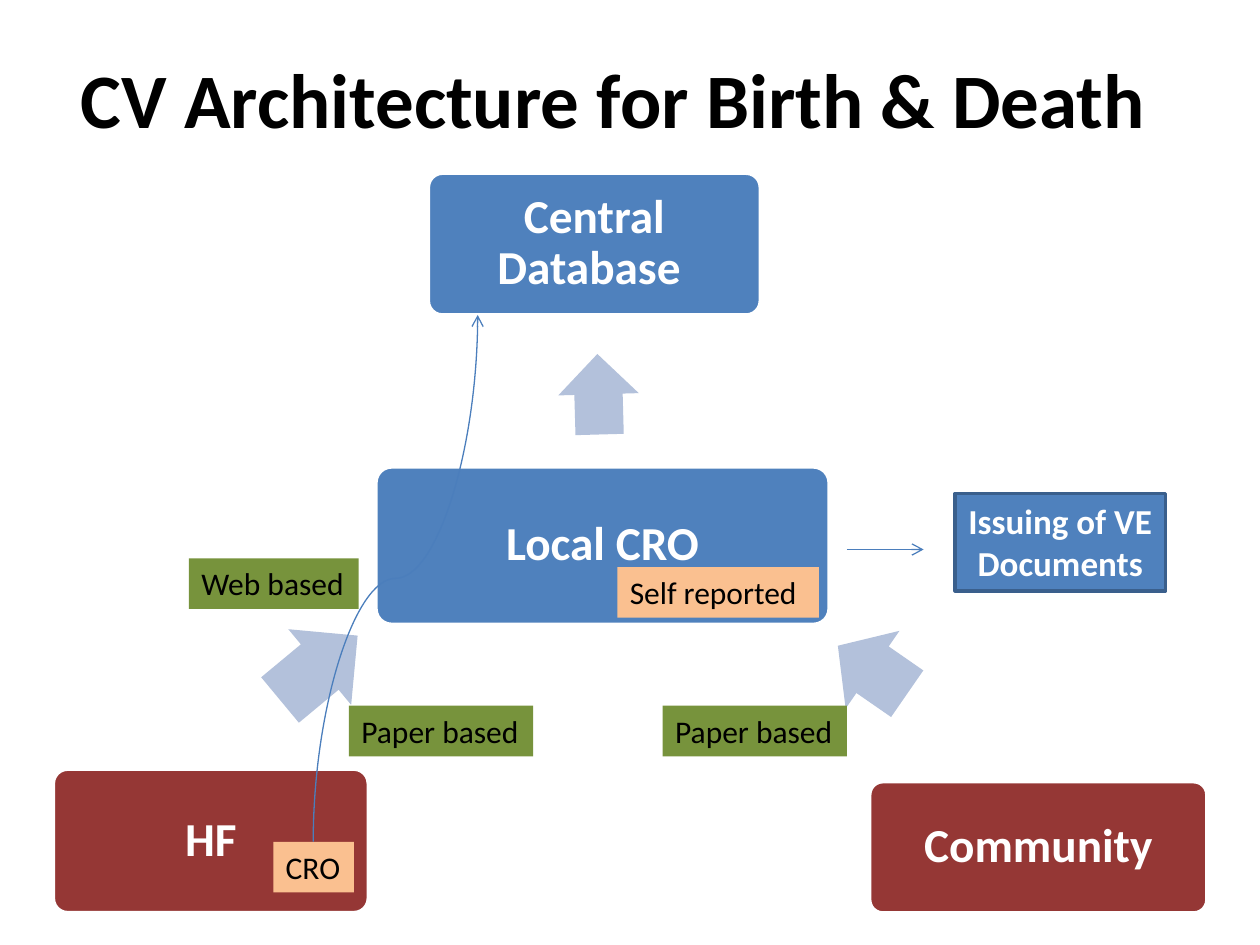
import dataclasses

import pptx
import pptx.dml.color
import pptx.enum.shapes
import pptx.enum.text
import pptx.oxml
import pptx.oxml.ns
import pptx.util
from pptx.enum.shapes import MSO_CONNECTOR, MSO_SHAPE
from pptx.enum.text import MSO_ANCHOR, PP_ALIGN

Pt = pptx.util.Pt


@dataclasses.dataclass(frozen=True)
class Theme:
    font: str = "Calibri"
    black: str = "000000"
    white: str = "FFFFFF"
    blue: str = "4F81BD"
    dark_blue: str = "3A5F8C"
    pale_blue: str = "B3C1DB"
    link: str = "4B7EBC"
    red: str = "953735"
    green: str = "77933C"
    peach: str = "FAC090"
    title_size: float = 44
    card_size: float = 27
    document_size: float = 20
    tag_size: float = 18


def color(value):
    return pptx.dml.color.RGBColor.from_string(value)


def apply(target, values):
    for name, value in values.items():
        setattr(target, name, value)


class SlideBuilder:
    """Draws styled elements on one slide; all lengths are in points."""

    def __init__(self, slide, theme):
        self.slide = slide
        self.theme = theme

    def set_text(self, shape, text, size, ink, bold=True, align=PP_ALIGN.CENTER,
                 anchor=MSO_ANCHOR.MIDDLE, spacing=1.0, **margins):
        frame = shape.text_frame
        apply(frame, {"text": text, "word_wrap": True, "vertical_anchor": anchor, **margins})
        paragraph = frame.paragraphs[0]
        apply(paragraph, {"alignment": align, "line_spacing": spacing})
        font = paragraph.runs[0].font
        apply(font, {"name": self.theme.font, "size": Pt(size), "bold": bold})
        font.color.rgb = color(ink)

    def block(self, kind, box, fill, line=None):
        shape = self.slide.shapes.add_shape(kind, *map(Pt, box))
        shape.shadow.inherit = False
        shape.fill.solid()
        shape.fill.fore_color.rgb = color(fill)
        if line:
            shape.line.color.rgb = color(line)
            shape.line.width = Pt(2)
        else:
            shape.line.fill.background()
        return shape

    def title(self, text, box):
        shape = self.slide.shapes.add_textbox(*map(Pt, box))
        self.set_text(shape, text, self.theme.title_size, self.theme.black)

    def card(self, text, box, fill):
        shape = self.block(MSO_SHAPE.ROUNDED_RECTANGLE, box, fill, self.theme.white)
        shape.adjustments[0] = 0.1
        sides = ("left", "top", "right", "bottom")
        self.set_text(shape, text, self.theme.card_size, self.theme.white, spacing=0.9,
                      **{f"margin_{side}": Pt(8) for side in sides})

    def block_arrow(self, box, rotation):
        shape = self.block(MSO_SHAPE.RIGHT_ARROW, box, self.theme.pale_blue)
        shape.adjustments[0] = 0.6
        shape.rotation = rotation

    def tag(self, text, left, top, width, fill):
        shape = self.block(MSO_SHAPE.RECTANGLE, (left, top, width, 29), fill)
        self.set_text(shape, text, self.theme.tag_size, self.theme.black, bold=False,
                      align=PP_ALIGN.LEFT, anchor=MSO_ANCHOR.TOP, margin_right=0)

    def document(self, text, box):
        shape = self.block(MSO_SHAPE.RECTANGLE, box, self.theme.blue, self.theme.dark_blue)
        self.set_text(shape, text, self.theme.document_size, self.theme.white,
                      anchor=MSO_ANCHOR.TOP)

    def link(self, kind, start, end):
        connector = self.slide.shapes.add_connector(kind, *map(Pt, start + end))
        connector.line.color.rgb = color(self.theme.link)
        connector.line.width = Pt(0.75)
        properties = connector.element.spPr
        line = properties.find(pptx.oxml.ns.qn("a:ln"))
        namespace = pptx.oxml.ns.nsdecls("a")
        line.append(pptx.oxml.parse_xml(f'<a:tailEnd {namespace} type="arrow"/>'))
        properties.append(pptx.oxml.parse_xml(f"<a:effectLst {namespace}/>"))
        return connector

    def rising_curve(self, start, end):
        """Curve that leaves and arrives vertically: a flipped curve turned by 90 degrees."""
        middle_x, middle_y = (start[0] + end[0]) / 2, (start[1] + end[1]) / 2
        half_x, half_y = (end[0] - start[0]) / 2, (start[1] - end[1]) / 2
        connector = self.link(MSO_CONNECTOR.CURVE,
                              (middle_x + half_y, middle_y + half_x),
                              (middle_x - half_y, middle_y - half_x))
        connector.element.spPr.find(pptx.oxml.ns.qn("a:xfrm")).set("rot", str(90 * 60000))


def main():
    presentation = pptx.Presentation()
    apply(presentation, {"slide_width": Pt(720), "slide_height": Pt(540)})
    theme = Theme()
    builder = SlideBuilder(presentation.slides.add_slide(presentation.slide_layouts[6]), theme)

    builder.title("CV Architecture for Birth & Death", (5.8, 21.6, 689.8, 68.4))

    # Reporting sources, local office and central database
    for text, box, fill in (
        ("HF", (30.5, 439.5, 180, 82), theme.red),
        ("Community", (497, 446.7, 192.7, 75), theme.red),
        ("Local CRO", (214.8, 266.8, 259, 90), theme.blue),
        ("Central Database ", (244.8, 99, 189.7, 81), theme.blue),
    ):
        builder.card(text, box, fill)

    # Flow arrows
    for box, rotation in (
        ((153.4, 353.5, 57.6, 56.2), 320.3),
        ((474.5, 355.7, 48.2, 54), 214.7),
        ((319, 202.3, 46, 46), 268.4),
    ):
        builder.block_arrow(box, rotation)

    # Reporting people and paper channels
    for text, left, top, width, fill in (
        ("CRO", 156.2, 481, 46, theme.peach),
        ("Self reported", 352.8, 324, 115.2, theme.peach),
        ("Paper based", 199.4, 403.2, 105.3, theme.green),
        ("Paper based", 378.7, 403.2, 105.3, theme.green),
    ):
        builder.tag(text, left, top, width, fill)

    # Issued documents and the web route to the database
    builder.document("Issuing of VE Documents", (545.8, 282, 120.2, 55.7))
    builder.link(MSO_CONNECTOR.STRAIGHT, (484, 314), (527.8, 314))
    builder.rising_curve((179, 481), (273, 180))
    builder.tag("Web based", 108, 319, 97, theme.green)

    presentation.save("out.pptx")


if __name__ == "__main__":
    main()
